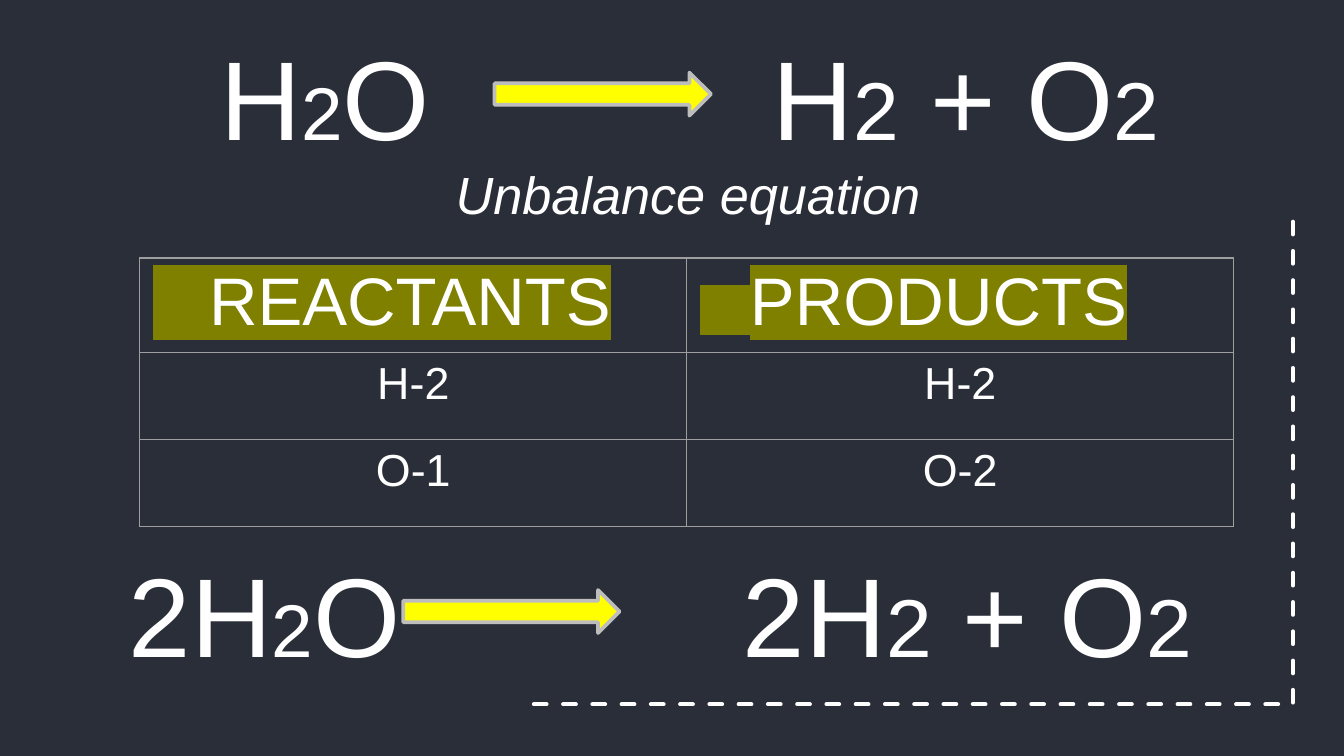
from lxml import etree
from pptx import Presentation
from pptx.dml.color import RGBColor
from pptx.enum.dml import MSO_LINE
from pptx.enum.shapes import MSO_SHAPE
from pptx.enum.text import MSO_ANCHOR, PP_ALIGN
from pptx.oxml.ns import qn
from pptx.util import Inches, Pt

DASH = MSO_LINE.DASH
RIGHT_ARROW = MSO_SHAPE.RIGHT_ARROW
TOP, CENTER, LEFT = MSO_ANCHOR.TOP, PP_ALIGN.CENTER, PP_ALIGN.LEFT

FONT = "Arial"
BACKGROUND, WHITE, YELLOW = "2A2E38", "FFFFFF", "FFFF00"
SILVER, GRID, OLIVE = "BDBDBD", "9E9E9E", "808000"

CAPTION = "Unbalance equation"
# left, top, tab stop of the products, arrow left, arrow top, runs (text, size)
EQUATIONS = [
    (1.54, 0.16, 4.11, 3.68, 0.54,
     [("H", 60), ("2", 40), ("O\tH", 60), ("2", 44), (" + O", 60), ("2", 44)]),
    (0.86, 4.01, 4.57, 3.0, 4.39,
     [("2H", 60), ("2", 40), ("O\t2H", 60), ("2", 44), (" + O", 60), ("2", 44)]),
]
# the olive band starts ahead of each word, so its leading spaces show
HEADERS = [
    [("   REACTANTS", 36)],
    [("    ", 24), ("PRODUCTS", 36)],
]
ATOM_COUNTS = [("H-2", "H-2"), ("O-1", "O-2")]
ROW_HEIGHTS = [0.7, 0.65, 0.65]
COLUMN_WIDTH = 4.07
CORNER = [(9.62, 1.65), (9.62, 5.24), (3.87, 5.24)]


def color(hex_value):
    return RGBColor.from_string(hex_value)


def add_run(paragraph, text, size, italic=False, highlight=None):
    run = paragraph.add_run()
    run.text = text
    font = run.font
    font.size, font.name, font.italic = Pt(size), FONT, italic
    font.color.rgb = color(WHITE)
    if highlight:
        mark = etree.Element(qn("a:highlight"))
        etree.SubElement(mark, qn("a:srgbClr"), val=highlight)
        run._r.rPr.find(qn("a:solidFill")).addnext(mark)


def set_tab(paragraph, position):
    tabs = etree.SubElement(paragraph._p.get_or_add_pPr(), qn("a:tabLst"))
    etree.SubElement(tabs, qn("a:tab"), pos=str(Inches(position)), algn="l")


def set_borders(cell):
    properties = cell._tc.get_or_add_tcPr()
    for index, side in enumerate(("lnL", "lnR", "lnT", "lnB")):
        border = etree.Element(qn("a:" + side), w=str(Pt(0.75)))
        fill = etree.SubElement(border, qn("a:solidFill"))
        etree.SubElement(fill, qn("a:srgbClr"), val=GRID)
        properties.insert(index, border)


def add_corner(slide):
    points = [(Inches(x), Inches(y)) for x, y in CORNER]
    builder = slide.shapes.build_freeform(*points[0])
    builder.add_line_segments(points[1:], close=False)
    corner = builder.convert_to_shape()
    corner.shadow.inherit = False
    corner.fill.background()
    corner.line.color.rgb = color(WHITE)
    corner.line.width = Pt(2.25)
    corner.line.dash_style = DASH
    outline = corner.line._get_or_add_ln()
    outline.set("cap", "rnd")
    etree.SubElement(outline, qn("a:round"))


def add_atom_table(slide):
    table = slide.shapes.add_table(
        len(ROW_HEIGHTS), len(HEADERS), Inches(1.04), Inches(1.92),
        Inches(COLUMN_WIDTH * len(HEADERS)), Inches(sum(ROW_HEIGHTS))).table
    table.first_row = table.horz_banding = False
    for column in table.columns:
        column.width = Inches(COLUMN_WIDTH)
    for row, height in zip(table.rows, ROW_HEIGHTS):
        row.height = Inches(height)
    for cell in table.iter_cells():
        cell.fill.background()
        set_borders(cell)
    for column, header in enumerate(HEADERS):
        paragraph = table.cell(0, column).text_frame.paragraphs[0]
        for text, size in header:
            add_run(paragraph, text, size, highlight=OLIVE)
    for row, counts in enumerate(ATOM_COUNTS, start=1):
        for column, count in enumerate(counts):
            paragraph = table.cell(row, column).text_frame.paragraphs[0]
            paragraph.alignment = CENTER
            add_run(paragraph, count, 24)


def add_equation(slide, left, top, products_tab, arrow_left, arrow_top, terms):
    group = slide.shapes.add_group_shape()
    equation = group.shapes.add_textbox(
        Inches(left), Inches(top), Inches(8.4), Inches(1.11))
    equation.text_frame.word_wrap = True
    paragraph = equation.text_frame.paragraphs[0]
    set_tab(paragraph, products_tab)
    for text, size in terms:
        add_run(paragraph, text, size)

    arrow = group.shapes.add_shape(
        RIGHT_ARROW, Inches(arrow_left), Inches(arrow_top), Inches(1.61), Inches(0.32))
    arrow.shadow.inherit = False
    arrow.fill.solid()
    arrow.fill.fore_color.rgb = color(YELLOW)
    arrow.line.color.rgb = color(SILVER)
    arrow.line.width = Pt(2)


def add_caption(slide):
    caption = slide.shapes.title
    caption.left, caption.top = Inches(3.29), Inches(1.16)
    caption.width, caption.height = Inches(4.24), Inches(0.57)
    caption.text_frame.word_wrap = True
    caption.text_frame.vertical_anchor = TOP
    paragraph = caption.text_frame.paragraphs[0]
    paragraph.alignment = LEFT
    add_run(paragraph, CAPTION, 28, italic=True)


def main():
    presentation = Presentation()
    presentation.slide_width = Inches(10)
    presentation.slide_height = Inches(10 * 9 / 16)
    slide = presentation.slides.add_slide(
        presentation.slide_layouts.get_by_name("Title Only"))
    slide.background.fill.solid()
    slide.background.fill.fore_color.rgb = color(BACKGROUND)
    add_corner(slide)
    add_caption(slide)
    add_atom_table(slide)
    for equation in EQUATIONS:
        add_equation(slide, *equation)
    presentation.save("out.pptx")


if __name__ == "__main__":
    main()
